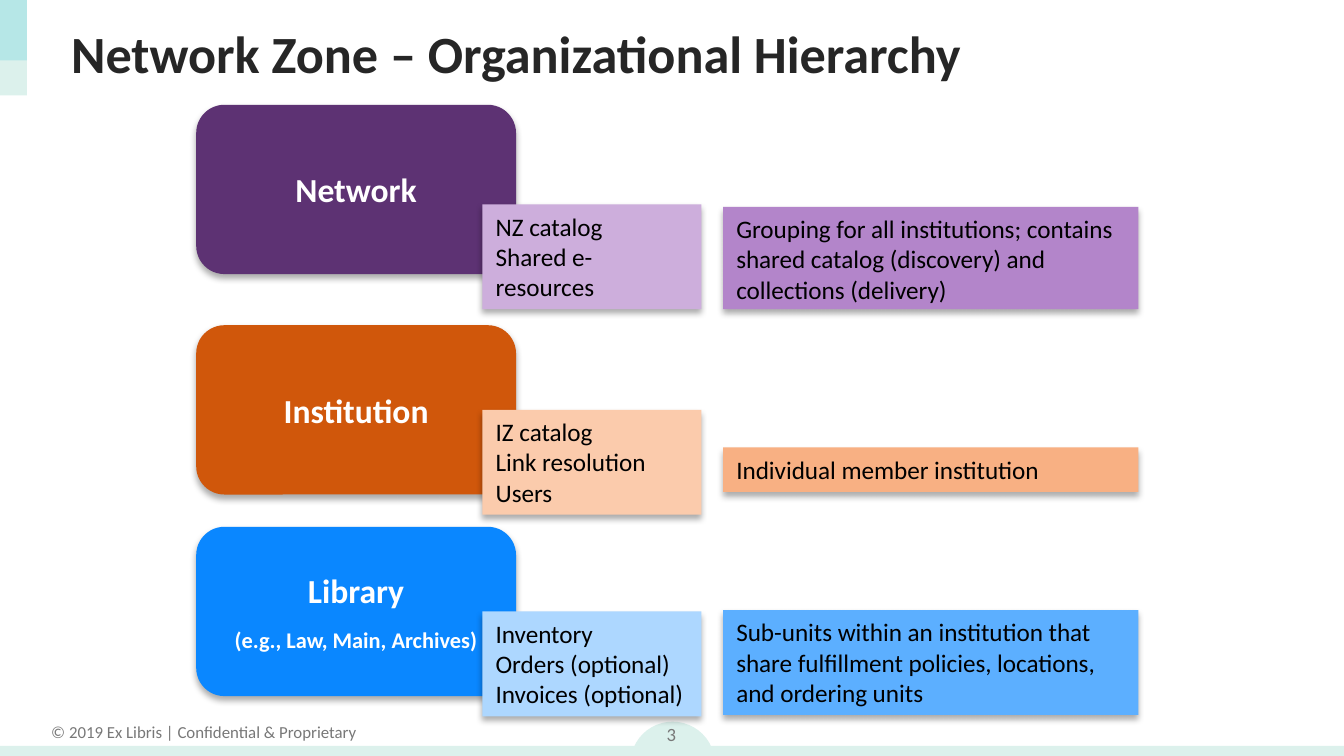
from lxml import etree
from pptx import Presentation
from pptx.dml.color import RGBColor
from pptx.enum.shapes import MSO_SHAPE
from pptx.enum.text import MSO_ANCHOR, PP_ALIGN
from pptx.oxml.ns import qn
from pptx.util import Inches, Pt

RECT, ROUNDED, OVAL = MSO_SHAPE.RECTANGLE, MSO_SHAPE.ROUNDED_RECTANGLE, MSO_SHAPE.OVAL
LEFT, CENTER = PP_ALIGN.LEFT, PP_ALIGN.CENTER
TOP, MIDDLE = MSO_ANCHOR.TOP, MSO_ANCHOR.MIDDLE

FONT = "Calibri"
WHITE = RGBColor(0xFF, 0xFF, 0xFF)
BLACK = RGBColor(0, 0, 0)
INK = RGBColor(0x26, 0x26, 0x26)
GRAY = RGBColor(0x78, 0x78, 0x78)
MINT = RGBColor(0xDC, 0xF1, 0xEC)
AQUA = RGBColor(0x50, 0xCF, 0xDA)
PURPLE, LILAC, ORCHID = (RGBColor.from_string(c) for c in ("5D3273", "CDAEDC", "B385CA"))
RUST, PEACH, APRICOT = (RGBColor.from_string(c) for c in ("D0570B", "FBCBAC", "F8B083"))
BLUE, ICE, SKY = (RGBColor.from_string(c) for c in ("0A87FF", "ADD7FF", "5CAFFF"))

# Top of the level, heading lines, colours (level, contents, description),
# contents (top offset, lines), description (top offset, height, text)
LEVELS = [
    (0.78, ["Network"], (PURPLE, LILAC, ORCHID),
     (0.74, ["NZ catalog", "Shared e-resources"]),
     (0.76, 0.76, "Grouping for all institutions; contains shared catalog "
                  "(discovery) and collections (delivery)")),
    (2.42, ["Institution"], (RUST, PEACH, APRICOT),
     (0.63, ["IZ catalog", "Link resolution", "Users"]),
     (0.91, 0.33, "Individual member institution")),
    (3.92, ["Library", "(e.g., Law, Main, Archives)"], (BLUE, ICE, SKY),
     (0.63, ["Inventory", "Orders (optional)", "Invoices (optional)"]),
     (0.62, 0.78, "Sub-units within an institution that share fulfillment "
                  "policies, locations, and ordering units")),
]


def add_block(slide, kind, box, color):
    block = slide.shapes.add_shape(kind, *map(Inches, box))
    block.shadow.inherit = False
    block.fill.solid()
    block.fill.fore_color.rgb = color
    block.line.fill.background()
    return block


def add_shadow(block):
    effects = block._element.spPr.find(qn("a:effectLst"))
    shadow = etree.SubElement(effects, qn("a:outerShdw"), blurRad=str(Pt(3.5)),
                              dist=str(Pt(2.2)), dir="5400000", rotWithShape="0")
    black = etree.SubElement(shadow, qn("a:srgbClr"), val="000000")
    etree.SubElement(black, qn("a:alpha"), val="32000")


def write(shape, lines, sizes, color, align=LEFT, anchor=TOP, bold=False, after=0, wrap=True):
    frame = shape.text_frame
    frame.word_wrap = wrap
    frame.vertical_anchor = anchor
    frame.text = "\n".join(lines)
    for paragraph, size in zip(frame.paragraphs, sizes):
        paragraph.alignment = align
        paragraph.space_after = Pt(after)
        font = paragraph.font
        font.name, font.size, font.bold = FONT, Pt(size), bold
        font.color.rgb = color


def add_frame(slide, width):
    """Corner accents, bottom band, copyright line and page number."""
    add_block(slide, OVAL, (width / 2 - 0.31, 5.37, 0.63, 0.63), MINT)
    copyright_line = slide.shapes.add_textbox(*map(Inches, (0.27, 5.32, 2.49, 0.25)))
    write(copyright_line, ["© 2019 Ex Libris | Confidential & Proprietary"], [9], GRAY,
          CENTER, wrap=False)
    add_block(slide, RECT, (0, 5.55, width, 0.11), MINT)
    add_block(slide, RECT, (0, 0, 0.2, 0.71), MINT)
    accent = add_block(slide, RECT, (0, 0, 0.2, 0.45), AQUA)
    accent_color = accent._element.spPr.find(qn("a:solidFill"))[0]
    etree.SubElement(accent_color, qn("a:alpha"), val="27000")
    page_number = slide.shapes.add_textbox(*map(Inches, (width / 2 - 0.3, 5.26, 0.59, 0.4)))
    write(page_number, ["3"], [10], GRAY, CENTER, MIDDLE)


def add_title(slide, box, text):
    title = slide.shapes.title
    title.left, title.top, title.width, title.height = map(Inches, box)
    write(title, [text], [28], INK, anchor=MIDDLE, bold=True)


def add_level(slide, left, top, heading, colors, contents, description):
    """A rounded level with its contents overlapping and a description beside."""
    level_color, contents_color, description_color = colors
    level = add_block(slide, ROUNDED, (left, top, 2.38, 1.26), level_color)
    write(level, heading, [18, 12], WHITE, CENTER, MIDDLE, bold=True, after=9)
    add_shadow(level)

    offset, lines = contents
    contents_box = (left + 2.13, top + offset, 1.63, 0.78)
    description_offset, height, text = description
    description_box = (left + 3.92, top + description_offset, 3.09, height)
    for box, color, note_lines in ((contents_box, contents_color, lines),
                                   (description_box, description_color, [text])):
        note = add_block(slide, RECT, box, color)
        write(note, note_lines, [13.5] * len(note_lines), BLACK)
        add_shadow(note)


def main():
    width = 10
    prs = Presentation()
    prs.slide_width = Inches(width)
    prs.slide_height = Inches(width * 9 / 16)
    slide = prs.slides.add_slide(prs.slide_layouts[5])  # title only
    add_frame(slide, width)
    add_title(slide, (0.43, 0.08, 9.21, 0.63), "Network Zone – Organizational Hierarchy")
    for level in LEVELS:
        add_level(slide, 1.46, *level)
    prs.save("out.pptx")


if __name__ == "__main__":
    main()
